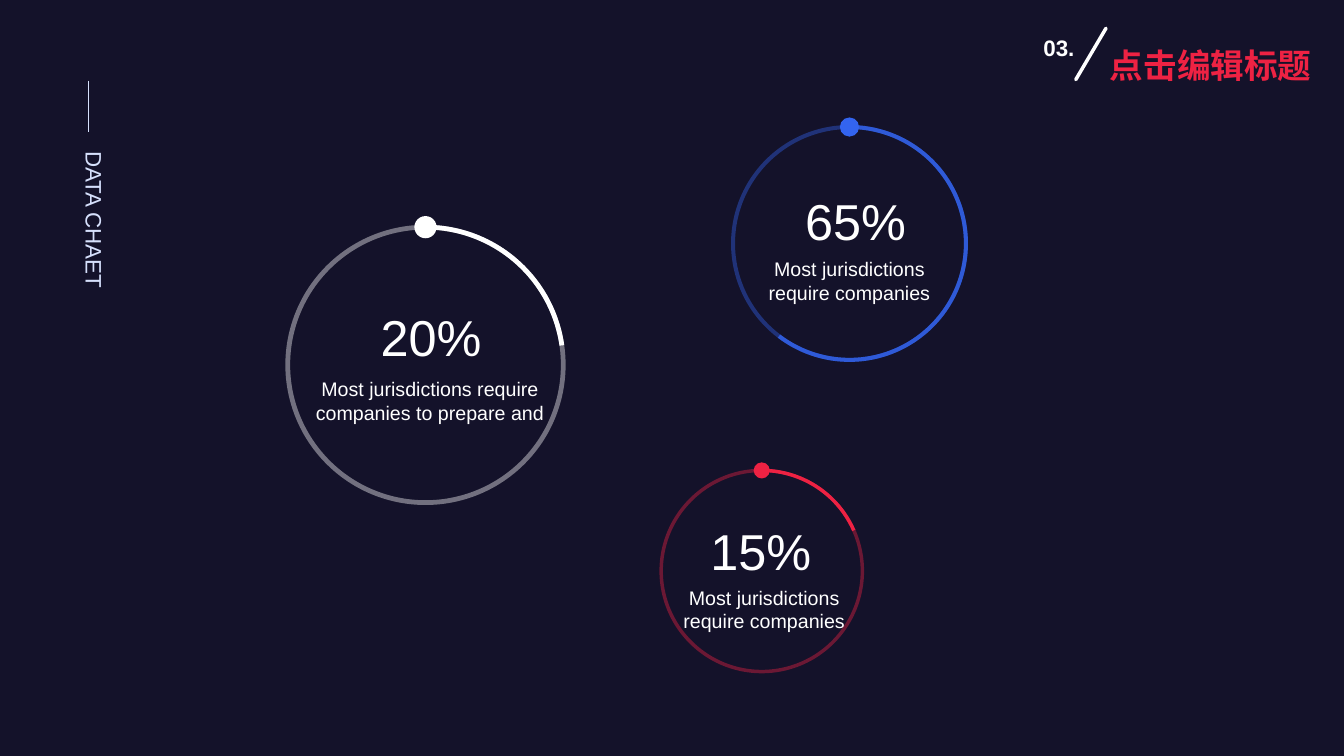
from dataclasses import dataclass

from lxml.etree import SubElement
from pptx import Presentation
from pptx.dml.color import RGBColor
from pptx.enum.shapes import MSO_CONNECTOR as Connector, MSO_SHAPE as Shape
from pptx.enum.text import MSO_AUTO_SIZE as AutoSize, PP_ALIGN as Align
from pptx.oxml.ns import qn
from pptx.util import Inches, Pt


@dataclass(frozen=True)
class Theme:
    font: str = "Arial"
    night: str = "14122A"
    red: str = "EE2243"
    blue: str = "3364EF"
    white: str = "FFFFFF"
    pale: str = "D6E0FC"
    percent: int = 36
    title: int = 24
    label: int = 16
    caption: int = 14


theme = Theme()


def add_text(text, *, at, size, color=theme.white, bold=False, align=Align.LEFT,
             spacing=None, vertical=None):
    box = page.shapes.add_textbox(*map(Inches, at))
    frame = box.text_frame
    frame.word_wrap = True
    frame.auto_size = AutoSize.SHAPE_TO_FIT_TEXT
    if vertical:
        frame._txBody.bodyPr.set("vert", vertical)
    para = frame.paragraphs[0]
    para.alignment = align
    para.line_spacing = spacing
    span = para.add_run()
    span.text = text
    span.font.name = theme.font
    span.font.size = Pt(size)
    span.font.bold = bold
    span.font.color.rgb = RGBColor.from_string(color)


def add_solid(group, kind, at, color, opacity=100):
    shape = group.shapes.add_shape(kind, *map(Inches, at))
    shape.shadow.inherit = False
    shape.line.fill.background()
    shape.fill.solid()
    shape.fill.fore_color.rgb = RGBColor.from_string(color)
    if opacity < 100:
        tint = shape.element.spPr.find(".//" + qn("a:srgbClr"))
        SubElement(tint, qn("a:alpha")).set("val", str(opacity * 1000))
    return shape


deck = Presentation()
deck.slide_width = Inches(13.33)
deck.slide_height = Inches(7.5)
page = deck.slides.add_slide(deck.slide_layouts[6])
page.background.fill.solid()
page.background.fill.fore_color.rgb = RGBColor.from_string(theme.night)

ADJUST_PER_DEGREE = 0.6
ARC_START = 180
TRACK_END = 178.05
TRACK_OPACITY = 40
RING_RATIO = 1.7 / 100

gauges = [
    dict(left=6.54, top=4.65, size=2.03, dot=0.16, color=theme.red,
         end=246.22, opacity=100, percent="15%", percent_at=(6.79, 5.11),
         caption="Most jurisdictions require companies",
         caption_at=(6.56, 5.76, 2.04, 0.57)),
    dict(left=7.25, top=1.24, size=2.35, dot=0.19, color=theme.blue,
         end=37.24, opacity=80, percent="65%", percent_at=(7.73, 1.84),
         caption="Most jurisdictions require companies",
         caption_at=(7.35, 2.5, 2.15, 0.57)),
    dict(left=2.83, top=2.23, size=2.78, dot=0.22, color=theme.white,
         end=261.86, opacity=100, percent="20%", percent_at=(3.52, 2.99),
         caption="Most jurisdictions require companies to prepare and",
         caption_at=(3.01, 3.69, 2.51, 0.57)),
]

for gauge in gauges:
    left, top, size, dot = (gauge[key] for key in ("left", "top", "size", "dot"))
    group = page.shapes.add_group_shape()
    for end, opacity in ((TRACK_END, TRACK_OPACITY), (gauge["end"], gauge["opacity"])):
        arc = add_solid(group, Shape.BLOCK_ARC, (left, top, size, size),
                        gauge["color"], opacity)
        arc.rotation = 90
        arc.adjustments[0] = ARC_START * ADJUST_PER_DEGREE
        arc.adjustments[1] = end * ADJUST_PER_DEGREE
        arc.adjustments[2] = RING_RATIO
    ring_middle = top + size * RING_RATIO / 2
    add_solid(group, Shape.OVAL,
              (left + (size - dot) / 2, ring_middle - dot / 2, dot, dot),
              gauge["color"])
    add_text(gauge["percent"], at=(*gauge["percent_at"], 1.51, 0.71),
             size=theme.percent, align=Align.CENTER)
    add_text(gauge["caption"], at=gauge["caption_at"],
             size=theme.caption, align=Align.CENTER)

rules = [
    ((0.88, 0.8, 0.88, 1.31), theme.pale, 1, "flat"),
    ((10.67, 0.79, 10.97, 0.28), theme.white, 2.5, "rnd"),
]
for ends, color, width, cap in rules:
    rule = page.shapes.add_connector(Connector.STRAIGHT, *map(Inches, ends))
    rule.line.color.rgb = RGBColor.from_string(color)
    rule.line.width = Pt(width)
    rule.get_or_add_ln().set("cap", cap)
    SubElement(rule.element.spPr, qn("a:effectLst"))

add_text("DATA CHAET", at=(0.65, 1.4, 0.47, 2.14), size=theme.label,
         color=theme.pale, vertical="eaVert")
add_text("点击编辑标题", at=(10.91, 0.32, 2.43, 0.54), size=theme.title,
         color=theme.red, bold=True, spacing=1.2)
add_text("03.", at=(10.25, 0.29, 0.62, 0.37), size=theme.label, bold=True)

deck.save("out.pptx")
